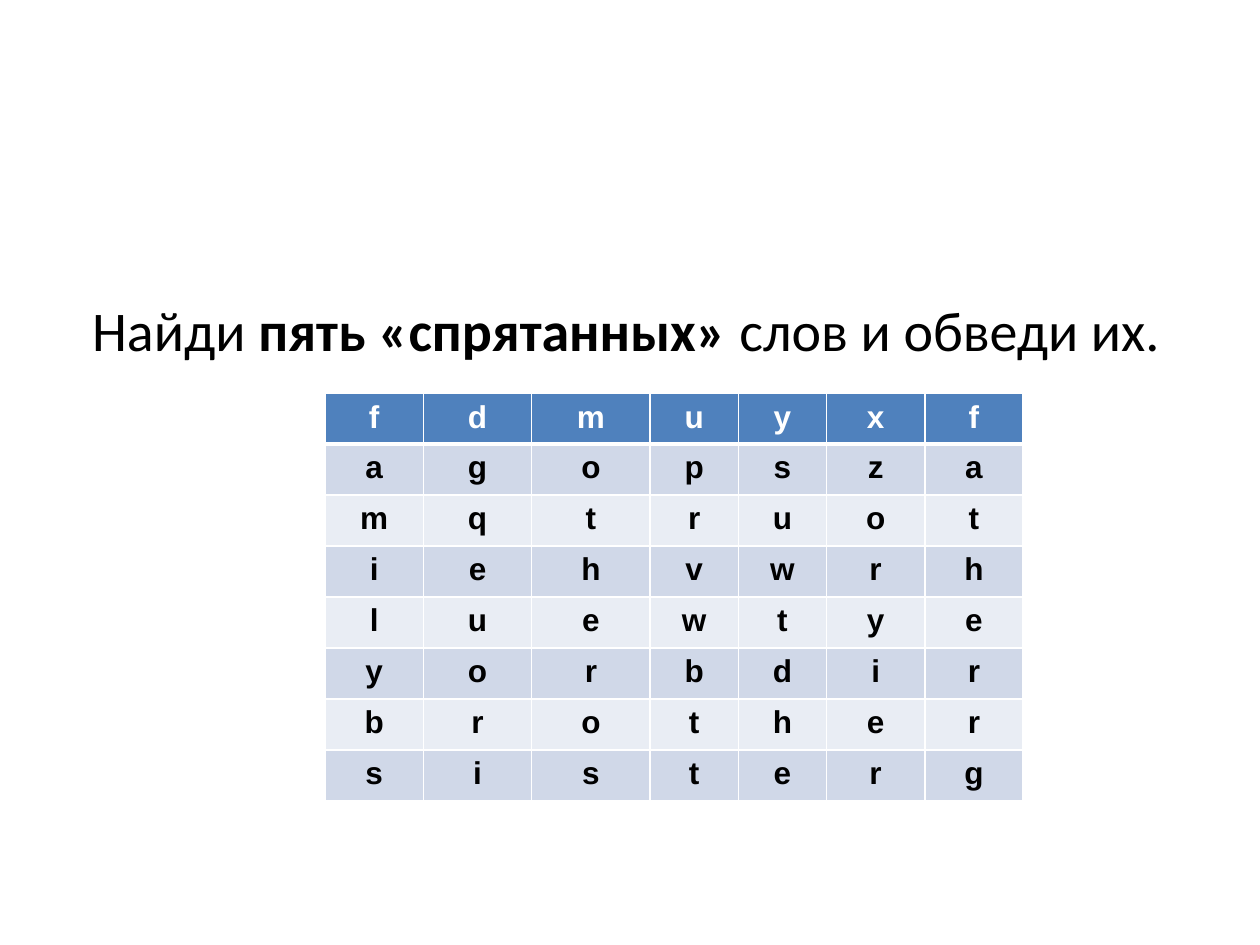
from dataclasses import dataclass

from lxml.etree import SubElement as Sub
from pptx import Presentation
from pptx.dml.color import RGBColor as RGB
from pptx.enum.text import MSO_ANCHOR as Anchor, PP_ALIGN as Align
from pptx.oxml.ns import qn
from pptx.util import Inches, Pt


@dataclass(frozen=True)
class Theme:
    ink: str = "000000"
    white: str = "FFFFFF"
    head: str = "4F81BD"
    bands: tuple = ("D0D8E8", "E9EDF4")
    title: int = 32
    letter: int = 18
    thin: int = 1
    thick: int = 3


THEME = Theme()
TITLE = [("Найди ", False), ("пять «спрятанных» ", True), ("слов и обведи их.", False)]
ROWS = ["fdmuyxf", "agopsza", "mqtruot", "iehvwrh", "luewtye", "yorbdir", "brother", "sisterg"]
COLS = [0.78, 0.86, 0.94, 0.7, 0.7, 0.78, 0.78]


def style(run, size, name, color, bold):
    for key, value in {"size": Pt(size), "name": name, "bold": bold}.items():
        setattr(run.font, key, value)
    run.font.color.rgb = RGB.from_string(color)


def add_title(slide, box):
    frame = slide.shapes.add_textbox(*map(Inches, box)).text_frame
    form = {"word_wrap": True, "vertical_anchor": Anchor.BOTTOM, "margin_bottom": 0}
    for key, value in form.items():
        setattr(frame, key, value)
    para = frame.paragraphs[0]
    para.alignment = Align.CENTER
    for text, bold in TITLE:
        run = para.add_run()
        run.text = text
        style(run, THEME.title, "Calibri", THEME.ink, bold)


def add_edges(cell, top, bottom):
    """Draw white cell borders; call before the fill is set."""
    props = cell._tc.get_or_add_tcPr()
    for side, width in zip("LRTB", (THEME.thin, THEME.thin, top, bottom)):
        line = Sub(props, qn(f"a:ln{side}"), w=str(Pt(width)))
        Sub(Sub(line, qn("a:solidFill")), qn("a:srgbClr"), val=THEME.white)


def add_letters(slide, box):
    """Place the word-search grid, with its first row as header."""
    shape = slide.shapes.add_table(len(ROWS), len(COLS), *map(Inches, box))
    table = shape.table
    for col, width in zip(table.columns, COLS):
        col.width = Inches(width)
    for r, word in enumerate(ROWS):
        table.rows[r].height = Inches(box[3] / len(ROWS))
        fill = THEME.bands[(r - 1) % 2] if r else THEME.head
        color = THEME.ink if r else THEME.white
        top = THEME.thick if r == 1 else THEME.thin
        bottom = THEME.thin if r else THEME.thick
        for c, letter in enumerate(word):
            cell = table.cell(r, c)
            add_edges(cell, top, bottom)
            cell.fill.solid()
            cell.fill.fore_color.rgb = RGB.from_string(fill)
            para = cell.text_frame.paragraphs[0]
            para.alignment = Align.CENTER
            run = para.add_run()
            run.text = letter
            style(run, THEME.letter, "Arial", color, True)


def main():
    deck = Presentation()
    deck.slide_width, deck.slide_height = Inches(10), Inches(7.5)
    slide = deck.slides.add_slide(deck.slide_layouts[6])
    add_title(slide, (0.47, 1.7, 9, 1.18))
    add_letters(slide, (2.58, 3.12, sum(COLS), 3.24))
    deck.save("out.pptx")


if __name__ == "__main__":
    main()
